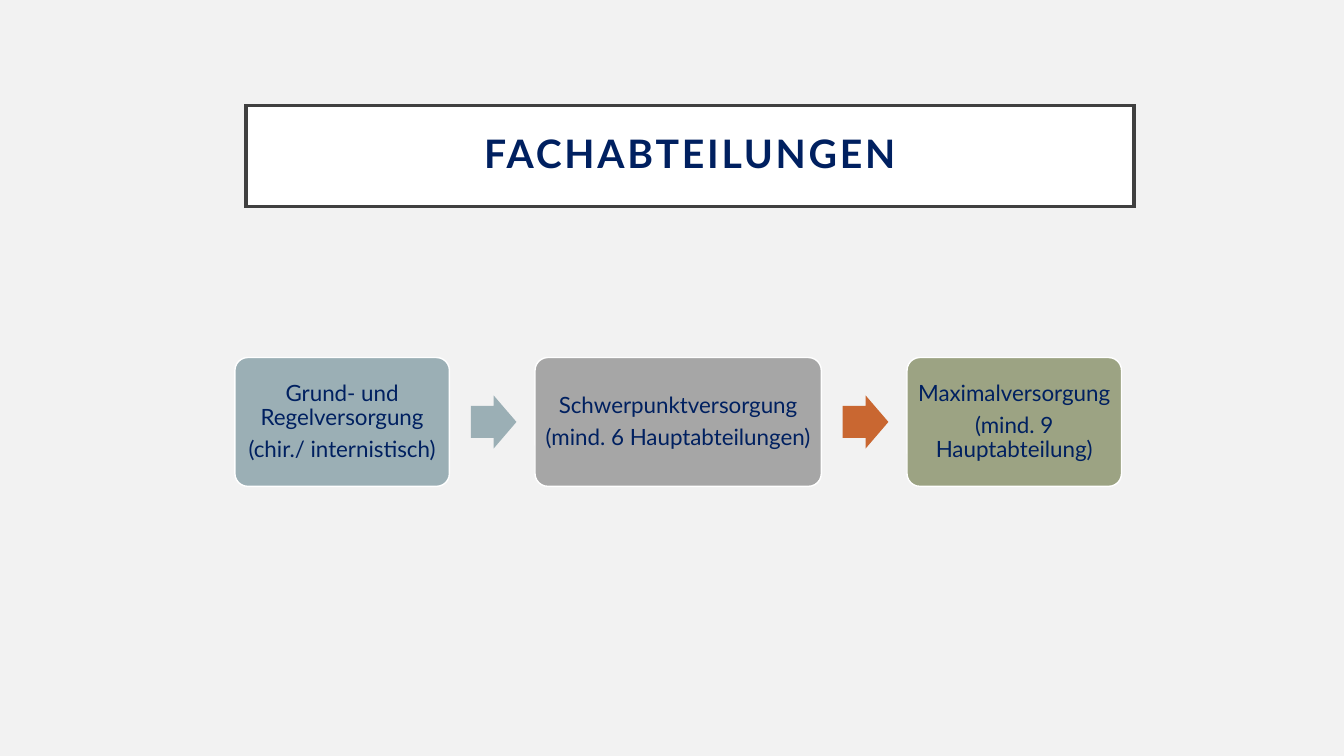
from lxml.etree import SubElement
from pptx import Presentation
from pptx.dml.color import RGBColor
from pptx.enum.shapes import MSO_SHAPE
from pptx.enum.text import MSO_ANCHOR, PP_ALIGN
from pptx.oxml.ns import qn
from pptx.util import Pt

COLORS = {
    "background": "F2F2F2",
    "white": "FFFFFF",
    "frame": "404040",
    "navy": "002060",
    "blue": "9BAFB5",
    "gray": "A6A6A6",
    "orange": "C96731",
    "green": "9CA383",
}


def color(name):
    return RGBColor.from_string(COLORS[name])


def write_text(shape, lines, size=16, bold=False, spacing=0, after=5.6, inset=4.8):
    frame = shape.text_frame
    frame.word_wrap = True
    frame.vertical_anchor = MSO_ANCHOR.MIDDLE
    frame.margin_left = frame.margin_right = Pt(inset)
    frame.margin_top = frame.margin_bottom = Pt(inset)
    for index, line in enumerate(lines):
        paragraph = frame.add_paragraph() if index else frame.paragraphs[0]
        paragraph.alignment = PP_ALIGN.CENTER
        paragraph.line_spacing = 0.9
        paragraph.space_after = Pt(after)
        run = paragraph.add_run()
        run.text = line
        run.font.name = "Lato"
        run.font.size = Pt(size)
        run.font.bold = bold
        run.font.color.rgb = color("navy")
        if spacing:
            run.font._element.set("spc", str(spacing * 100))


class SlideBuilder:
    def __init__(self, slide):
        self.slide = slide
        slide.background.fill.solid()
        slide.background.fill.fore_color.rgb = color("background")

    def shape(self, kind, left, top, width, height, fill, line=None, line_width=1, adjustments=()):
        shape = self.slide.shapes.add_shape(kind, Pt(left), Pt(top), Pt(width), Pt(height))
        shape.shadow.inherit = False
        shape.fill.solid()
        shape.fill.fore_color.rgb = color(fill)
        if line:
            shape.line.color.rgb = color(line)
            shape.line.width = Pt(line_width)
        else:
            shape.line.fill.background()
        for index, value in enumerate(adjustments):
            shape.adjustments[index] = value
        return shape

    def title(self, text):
        shape = self.shape(MSO_SHAPE.RECTANGLE, 175.7, 75.4, 634.3, 72, "white", "frame", 2.5)
        SubElement(shape.line._get_or_add_ln(), qn("a:miter"), lim="800000")
        write_text(shape, [text], size=28, bold=True, spacing=2, after=0, inset=14.4)

    def card(self, left, middle, width, fill, lines, height=92):
        shape = self.shape(MSO_SHAPE.ROUNDED_RECTANGLE, left, middle - height / 2,
                           width, height, fill, "white", adjustments=[0.1])
        write_text(shape, lines)

    def arrow(self, left, middle, width, fill, height=38):
        self.shape(MSO_SHAPE.RIGHT_ARROW, left, middle - height / 2,
                   width, height, fill, adjustments=[0.6, 0.5])


def main():
    presentation = Presentation()
    presentation.slide_width = Pt(960)
    presentation.slide_height = Pt(540)
    builder = SlideBuilder(presentation.slides.add_slide(presentation.slide_layouts[6]))
    builder.title("FACHABTEILUNGEN")

    levels = [
        (153.2, "blue", "blue", ["Grund- und Regelversorgung", "(chir./ internistisch)"]),
        (204.5, "gray", "orange", ["Schwerpunktversorgung", "(mind. 6 Hauptabteilungen)"]),
        (153.2, "green", None, ["Maximalversorgung", "(mind. 9 Hauptabteilung)"]),
    ]
    left, middle = 167.8, 301.4
    gap_before, arrow_width, gap_after = 15.3, 32.6, 13.3
    for width, fill, arrow_fill, lines in levels:
        builder.card(left, middle, width, fill, lines)
        left += width + gap_before
        if arrow_fill:
            builder.arrow(left, middle, arrow_width, arrow_fill)
        left += arrow_width + gap_after

    presentation.save("out.pptx")


if __name__ == "__main__":
    main()
